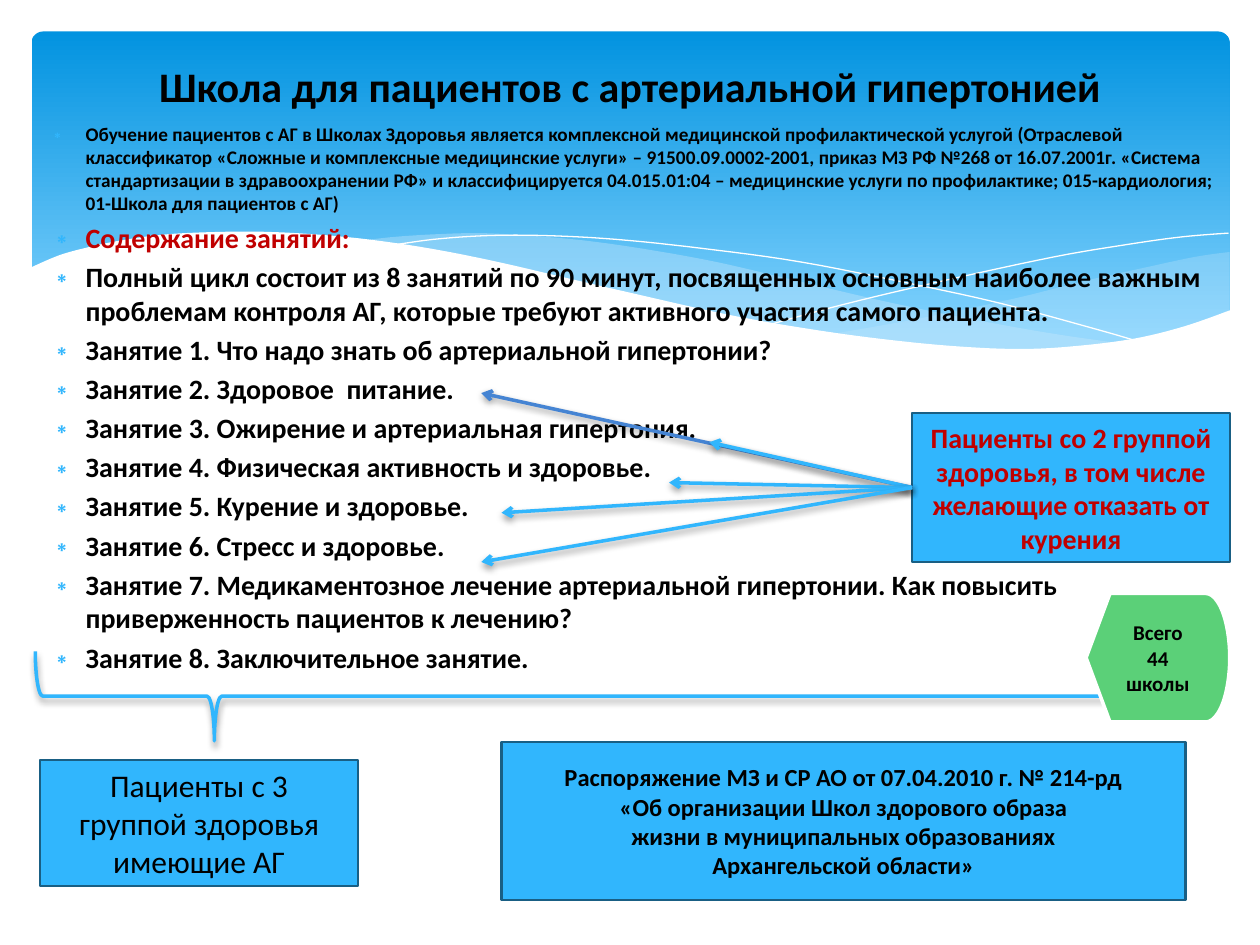
from itertools import chain

from lxml.etree import SubElement
from pptx import Presentation
from pptx.dml.color import RGBColor
from pptx.enum.shapes import MSO_CONNECTOR, MSO_SHAPE
from pptx.enum.text import MSO_ANCHOR, MSO_AUTO_SIZE, PP_ALIGN
from pptx.oxml.ns import qn
from pptx.util import Inches, Pt

COLUMNS, ROWS = 100, 75
CELL = Inches(0.1)
SKY, BLACK, RED, WHITE = "31B6FD", "000000", "C00000", "FFFFFF"
PALE, EDGE = "C6E7FC", "195F84"

RIGHT_SWELL = [
    [(97.6, 20), (94.8, 20.4), (90.6, 21.3), (86.1, 22.3), (80.5, 23.7), (72.9, 25.3), (66.1, 26.5)],
    [(66.1, 26.5), (70.5, 27.1), (74.5, 27.5), (80.3, 27.8), (85.4, 27.7), (89.7, 27), (93.5, 26.2), (97.6, 24.7)],
]
MIDDLE_SWELL = [
    [(89.3, 27.3), (83.7, 26.5), (77.5, 25.4), (70.6, 24), (62.9, 22.2), (56.9, 20.8), (51.4, 19.8),
     (46.5, 19.1), (42, 18.7), (38, 18.5), (34.4, 18.6), (31.3, 18.8), (28.6, 19.1)],
    [(28.6, 19.1), (34.2, 19.9), (40.4, 21.1), (44.9, 22.2), (53, 24), (60.1, 25.5), (66.5, 26.6),
     (72.2, 27.4), (77.3, 27.7), (81.8, 27.8), (85.7, 27.7), (89.3, 27.3)],
]
LONG_CREST = [
    [(30.9, 19.5), (34.4, 19), (38.7, 18.7), (43.3, 18.7), (48.9, 19), (55.6, 19.7), (63.6, 20.8),
     (72.7, 22.6), (79.5, 24.1), (86.9, 26.1), (90.7, 27.2)],
]
SHORT_CREST = [
    [(61.3, 25.7), (67.2, 24.1), (74.8, 22.3), (83.6, 20.4), (89.5, 19.4), (93.8, 18.8), (97.5, 18.5)],
]
WHITE_WAVE = [
    [(97.7, 24.6), (94, 25.9), (89.9, 26.9), (85, 27.5), (80.9, 27.7), (76.1, 27.5), (70.8, 27),
     (64.8, 26.2), (57.9, 25), (50.3, 23.3), (44.7, 22), (39.1, 20.7), (34, 19.7), (29.2, 19),
     (25, 18.6), (21.1, 18.4), (17.7, 18.4), (13.2, 18.6), (9.5, 19.1), (6.7, 19.7), (4.6, 20.3), (2.3, 21.3)],
    [(2.3, 32.9), (97.7, 32.9)],
]

LESSONS = [
    "Полный цикл состоит из 8 занятий по 90 минут, посвященных основным наиболее важным проблемам "
    "контроля АГ, которые требуют активного участия самого пациента.",
    "Занятие 1. Что надо знать об артериальной гипертонии?",
    "Занятие 2. Здоровое  питание.",
    "Занятие 3. Ожирение и артериальная гипертония.",
    "Занятие 4. Физическая активность и здоровье.",
    "Занятие 5. Курение и здоровье.",
    "Занятие 6. Стресс и здоровье.",
    "Занятие 7. Медикаментозное лечение артериальной гипертонии. Как повысить приверженность "
    "пациентов к лечению?",
    "Занятие 8. Заключительное занятие.",
]
REGULATION = (
    "Обучение пациентов с АГ в Школах Здоровья является комплексной медицинской профилактической "
    "услугой (Отраслевой классификатор «Сложные и комплексные медицинские услуги» – "
    "91500.09.0002-2001, приказ МЗ РФ №268 от 16.07.2001г. «Система стандартизации в здравоохранении "
    "РФ» и классифицируется 04.015.01:04 – медицинские услуги по профилактике; 015-кардиология; "
    "01-Школа для пациентов с АГ)"
)
ORDER = [
    "Распоряжение МЗ и СР АО от 07.04.2010 г. № 214-рд",
    "«Об организации Школ здорового образа",
    "жизни в муниципальных образованиях",
    "Архангельской области»",
]


def paint(color, value):
    color.rgb = RGBColor.from_string(value)


def cells(*counts):
    return [round(count * CELL) for count in counts]


def spline(knots, steps=6):
    padded = [knots[0], *knots, knots[-1]]
    curve = [knots[0]]
    for window in zip(padded, padded[1:], padded[2:], padded[3:]):
        for t in (step / steps for step in range(1, steps + 1)):
            curve.append(tuple(
                (2 * b + (c - a) * t + (2 * a - 5 * b + 4 * c - d) * t**2
                 + (3 * b - a - 3 * c + d) * t**3) / 2
                for a, b, c, d in zip(*window)))
    return curve


class Board:
    font = "Calibri"

    def __init__(self, slide):
        self.slide = slide
        self.shapes = slide.shapes

    def outline(self, shape, color, width):
        if color is None:
            shape.line.fill.background()
        else:
            paint(shape.line.color, color)
            shape.line.width = Pt(width)

    def cast_shadow(self, shape):
        effects = shape._element.spPr.get_or_add_effectLst()
        shadow = SubElement(effects, qn("a:outerShdw"), blurRad=str(Pt(4)), dist=str(Pt(2)),
                            dir="5400000", rotWithShape="0")
        tint = SubElement(shadow, qn("a:srgbClr"), val=BLACK)
        SubElement(tint, qn("a:alpha"), val="38000")

    def set_text(self, frame, texts, size, color=BLACK, bold=True):
        frame.word_wrap = True
        frame.auto_size = MSO_AUTO_SIZE.NONE
        frame.vertical_anchor = MSO_ANCHOR.MIDDLE
        frame.text = "\n".join(texts)
        for paragraph in frame.paragraphs:
            paragraph.alignment = PP_ALIGN.CENTER
            self.set_font(paragraph, size, color, bold)

    def set_font(self, paragraph, size, color, bold=True):
        font = paragraph.font
        font.name, font.size, font.bold = self.font, Pt(size), bold
        paint(font.color, color)

    def add_bullet(self, paragraph):
        properties = paragraph._p.get_or_add_pPr()
        indent = Inches(0.3)
        properties.set("marL", str(indent))
        properties.set("indent", str(-indent))
        tint = SubElement(properties, qn("a:buClr"))
        SubElement(tint, qn("a:srgbClr"), val=SKY)
        SubElement(properties, qn("a:buChar"), char="∗")

    def place(self, holder, *box):
        holder.left, holder.top, holder.width, holder.height = cells(*box)
        self.shapes._spTree.append(holder._element)

    def title(self, text, *box):
        holder = self.shapes.title
        self.place(holder, *box)
        self.set_text(holder.text_frame, [text], 24)

    def bullets(self, items, *box):
        holder = self.slide.placeholders[1]
        self.place(holder, *box)
        frame = holder.text_frame
        frame.text = "\n".join(text for text, _, _ in items)
        frame.auto_size = MSO_AUTO_SIZE.NONE
        for paragraph, (_, size, color) in zip(frame.paragraphs, items):
            self.add_bullet(paragraph)
            self.set_font(paragraph, size, color)

    def fill(self, shape, color):
        if color is None:
            shape.fill.background()
        else:
            shape.fill.solid()
            paint(shape.fill.fore_color, color)

    def preset(self, kind, box, fill=None, line=None, width=1.25, adjust=()):
        shape = self.shapes.add_shape(kind, *cells(*box))
        shape.shadow.inherit = False
        for index, value in enumerate(adjust):
            shape.adjustments[index] = value
        self.fill(shape, fill)
        self.outline(shape, line, width)
        return shape

    def card(self, texts, box, size, color=BLACK, bold=True, kind=MSO_SHAPE.RECTANGLE,
             fill=SKY, line=EDGE, width=1.25):
        shape = self.preset(kind, box, fill, line, width)
        self.set_text(shape.text_frame, texts, size, color, bold)

    def sky(self, *box):
        panel = self.preset(MSO_SHAPE.ROUNDED_RECTANGLE, box, SKY, adjust=[0.034])
        panel.fill.gradient()
        panel.fill.gradient_angle = 270
        for stop, (position, color) in zip(panel.fill.gradient_stops, [(0, "0293E0"), (0.9, "83D3FE")]):
            stop.position = position
            paint(stop.color, color)

    def wave(self, curves, fill=None, opacity=100, line=None):
        points = [cells(*point) for point in chain.from_iterable(map(spline, curves))]
        builder = self.shapes.build_freeform(*points[0])
        builder.add_line_segments(points[1:], close=fill is not None)
        shape = builder.convert_to_shape()
        shape.shadow.inherit = False
        self.outline(shape, line, 0)
        self.fill(shape, fill)
        if opacity < 100:
            tint = shape._element.spPr.find(qn("a:solidFill"))[0]
            SubElement(tint, qn("a:alpha"), val=str(opacity * 1000))

    def arrow(self, start, end, color):
        connector = self.shapes.add_connector(MSO_CONNECTOR.STRAIGHT, *cells(*start, *end))
        self.outline(connector, color, 2)
        SubElement(connector._element.spPr.find(qn("a:ln")), qn("a:tailEnd"), type="arrow")
        self.cast_shadow(connector)

    def brace(self, *box):
        shape = self.preset(MSO_SHAPE.RIGHT_BRACE, box, line=SKY, width=2, adjust=[0.083, 0.847])
        shape.rotation = 90
        self.cast_shadow(shape)


def main():
    deck = Presentation()
    deck.slide_width, deck.slide_height = cells(COLUMNS, ROWS)
    board = Board(deck.slides.add_slide(deck.slide_layouts[1]))

    board.sky(2.5, 2.5, 95.1, 27)
    board.wave(RIGHT_SWELL, PALE, 29)
    board.wave(MIDDLE_SWELL, PALE, 40)
    board.wave(LONG_CREST, line=WHITE)
    board.wave(SHORT_CREST, line=WHITE)
    board.wave(WHITE_WAVE, WHITE)

    board.bullets([(REGULATION, 11, BLACK), ("Содержание занятий:", 16, RED),
                   *((lesson, 16, BLACK) for lesson in LESSONS)], 2.8, 9.2, 95.3, 57.8)
    board.title("Школа для пациентов с артериальной гипертонией", 5, 3.7, 90, 6.2)

    board.card(["Пациенты со 2 группой здоровья, в том числе желающие отказать от курения"],
               (72.4, 32.8, 25.2, 11.8), 16, RED)
    board.card(["Пациенты с 3 группой здоровья имеющие АГ"], (3.2, 60.3, 25.2, 10), 18, bold=False)
    for end, color in [((38.2, 31.2), "4584D3"), ((56.3, 35.1), SKY), ((53.1, 38.3), SKY),
                       ((39.8, 40.7), SKY), ((38.2, 44.6), SKY)]:
        board.arrow((72.4, 38.7), end, color)
    board.brace(45.7, 8.8, 7.1, 92.9)
    board.card(ORDER, (39.8, 58.9, 54.3, 12.5), 14)
    board.card(["Всего 44 школы"], (86.2, 47.1, 11.4, 10.2), 12,
               kind=MSO_SHAPE.FLOWCHART_DISPLAY, fill="5BD078", line=WHITE, width=2)
    deck.save("out.pptx")


if __name__ == "__main__":
    main()
